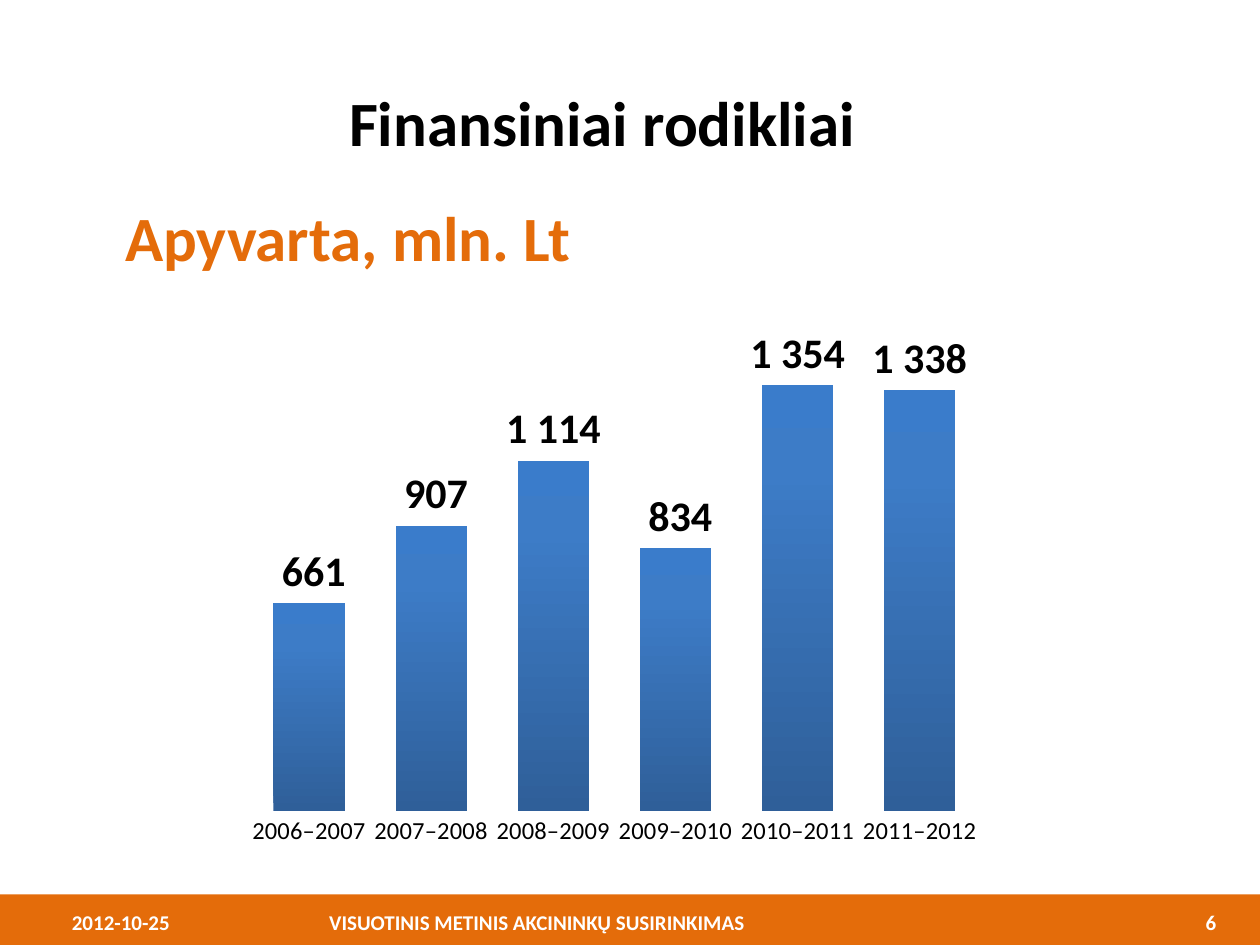
from dataclasses import dataclass

import lxml.etree
import pptx
import pptx.chart.data
import pptx.dml.color
import pptx.enum.chart
import pptx.enum.shapes
import pptx.enum.text
import pptx.oxml
import pptx.oxml.ns
import pptx.util

Pt = pptx.util.Pt
qn = pptx.oxml.ns.qn
ALIGN = pptx.enum.text.PP_ALIGN
FONT = "Calibri"
COLORS = {
    "orange": "E46C0A",
    "black": "000000",
    "white": "FFFFFF",
    "bar_dark": "2F5F99",
    "bar_mid": "3D7CC7",
    "bar_light": "3A7CCB",
}


@dataclass
class Label:
    text: str
    left: float
    top: float
    width: float
    height: float
    size: float
    color: str
    align: ALIGN = ALIGN.LEFT
    inset: float = 7.2
    tabs: tuple[tuple[float, str], ...] = ()


TURNOVER = {
    "2006–2007": 661,
    "2007–2008": 907,
    "2008–2009": 1114,
    "2009–2010": 834,
    "2010–2011": 1354,
    "2011–2012": 1338,
}
LABELS = [
    Label("2012-10-25\tVISUOTINIS METINIS AKCININKŲ SUSIRINKIMAS\t6",
          34, 512.5, 677, 29, 12, "white", tabs=((147, "l"), (654, "r"))),
    Label("Finansiniai rodikliai", 0, 45.5, 719, 48, 36, "black", inset=199.5),
    Label("Apyvarta, mln. Lt", 62.5, 111, 273, 48, 36, "orange", ALIGN.CENTER),
]


def rgb(name: str) -> pptx.dml.color.RGBColor:
    return pptx.dml.color.RGBColor.from_string(COLORS[name])


def style_font(font, size: float, color: str, bold: bool = False) -> None:
    font.name, font.size, font.bold = FONT, Pt(size), bold
    font.color.rgb = rgb(color)


def add_label(s, label: Label) -> None:
    sp = s.shapes.add_textbox(Pt(label.left), Pt(label.top), Pt(label.width), Pt(label.height))
    tf = sp.text_frame
    tf.word_wrap = True
    tf.vertical_anchor = pptx.enum.text.MSO_ANCHOR.MIDDLE
    tf.margin_left = Pt(label.inset)
    tf.text = label.text
    p = tf.paragraphs[0]
    p.alignment = label.align
    if label.tabs:
        tab_list = lxml.etree.SubElement(p._p.get_or_add_pPr(), qn("a:tabLst"))
        for pos, algn in label.tabs:
            lxml.etree.SubElement(tab_list, qn("a:tab"), pos=str(Pt(pos)), algn=algn)
    for r in p.runs:
        style_font(r.font, label.size, label.color, True)


def set_gradient(fill, stops: list[tuple[int, str]], angle: float) -> None:
    fill.gradient()
    fill.gradient_angle = angle
    gs_list = fill._fill._gradFill.find(qn("a:gsLst"))
    for gs in list(gs_list):
        gs_list.remove(gs)
    for percent, name in stops:
        gs = lxml.etree.SubElement(gs_list, qn("a:gs"), pos=str(percent * 1000))
        lxml.etree.SubElement(gs, qn("a:srgbClr"), val=COLORS[name])


def set_plot_layout(chart, x: float, y: float, w: float, h: float) -> None:
    plot_area = chart._chartSpace.chart.plotArea
    for old in plot_area.findall(qn("c:layout")):
        plot_area.remove(old)
    layout = lxml.etree.Element(qn("c:layout"))
    manual = lxml.etree.SubElement(layout, qn("c:manualLayout"))
    values = {"layoutTarget": "inner", "xMode": "edge", "yMode": "edge",
              "x": x, "y": y, "w": w, "h": h}
    for tag, val in values.items():
        lxml.etree.SubElement(manual, qn(f"c:{tag}"), val=str(val))
    plot_area.insert(0, layout)


def add_turnover_chart(s) -> None:
    data = pptx.chart.data.CategoryChartData(number_format="#,##0")
    data.categories = list(TURNOVER)
    data.add_series("Series 1", list(TURNOVER.values()))
    chart = s.shapes.add_chart(pptx.enum.chart.XL_CHART_TYPE.COLUMN_CLUSTERED,
                               Pt(44.5), Pt(158.5), Pt(549.5), Pt(342), data).chart
    chart.has_title = chart.has_legend = False
    style_font(chart.font, 10, "black")
    set_plot_layout(chart, 0.177, 0.051, 0.762, 0.84)

    # Axes
    cat, val = chart.category_axis, chart.value_axis
    cat.major_tick_mark = pptx.enum.chart.XL_TICK_MARK.NONE
    cat.format.line.fill.background()
    style_font(cat.tick_labels.font, 14, "black")
    val.minimum_scale, val.maximum_scale = 0, 1600
    val.has_major_gridlines = False
    val.visible = False

    # Bars and their values
    plot = chart.plots[0]
    plot.gap_width = 71
    plot.vary_by_categories = False
    series = plot.series[0]
    set_gradient(series.format.fill,
                 [(0, "bar_dark"), (80, "bar_mid"), (100, "bar_light")], 90)
    labels = series.data_labels
    labels.show_value = True
    labels.position = pptx.enum.chart.XL_LABEL_POSITION.OUTSIDE_END
    labels.number_format = r"#\ ##0"
    labels.number_format_is_linked = False
    style_font(labels.font, 24, "black", True)


def main() -> None:
    prs = pptx.Presentation()
    prs.slide_width, prs.slide_height = Pt(720), Pt(540)
    s = prs.slides.add_slide(prs.slide_layouts[6])

    # Footer band
    band = s.shapes.add_shape(pptx.enum.shapes.MSO_SHAPE.RECTANGLE,
                              Pt(0), Pt(511), Pt(720), Pt(32))
    band.shadow.inherit = False
    band.fill.solid()
    band.fill.fore_color.rgb = rgb("orange")
    band.line.fill.background()

    # Chart, then footer text and headings
    add_turnover_chart(s)
    for label in LABELS:
        add_label(s, label)
    prs.save("out.pptx")


if __name__ == "__main__":
    main()
